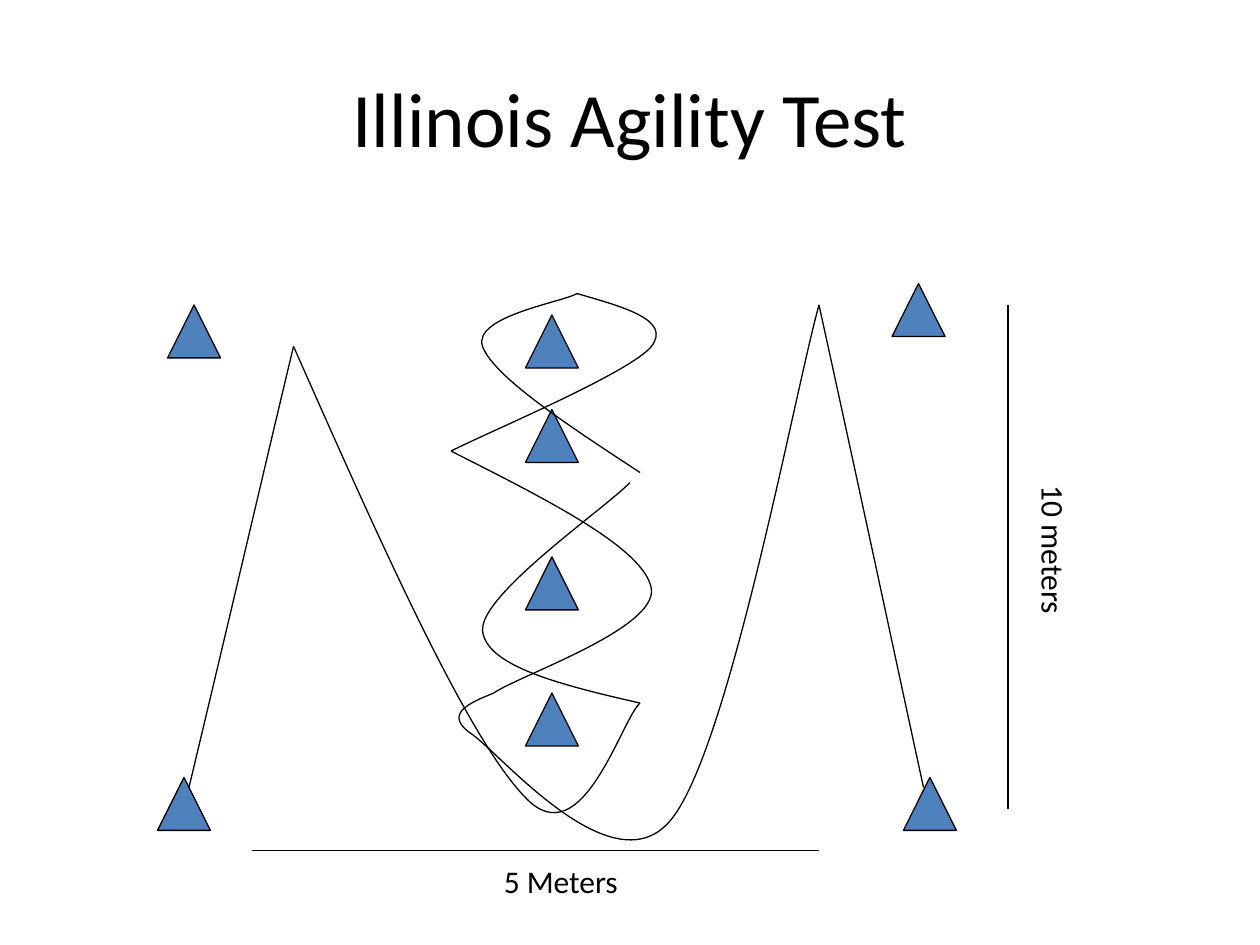
import pptx
import pptx.dml.color
import pptx.enum.shapes
import pptx.enum.text
import pptx.oxml
import pptx.oxml.ns
import pptx.util
from pptx.util import Inches

BLACK = "000000"
CONE_BLUE = "4F81BD"
CONE_SIZE = 0.42

# Top left corner of each cone
CONES = [
    (1.25, 6.17), (1.33, 2.42),
    (4.17, 2.5), (4.17, 3.25), (4.17, 4.42), (4.17, 5.5),
    (7.08, 2.25), (7.17, 6.17),
]

# Running route: a start point, then three points for each Bezier curve
ROUTE = [
    [(1.5, 6.25), (1.85, 4.79), (2.19, 3.33), (2.33, 2.75)],
    [(2.33, 2.75), (3.02, 4.31), (3.71, 5.86), (4.17, 6.33),
     (4.62, 6.81), (4.93, 5.71), (5.08, 5.58)],
    [(5.08, 5.58), (4.47, 5.44), (3.85, 5.29), (3.83, 5),
     (3.82, 4.71), (4.81, 4.03), (5, 3.83)],
    [(5.08, 3.75), (4.5, 3.37), (3.92, 2.99), (3.83, 2.75),
     (3.75, 2.51), (4.46, 2.4), (4.58, 2.33)],
    [(4.58, 2.33), (4.96, 2.44), (5.33, 2.54), (5.17, 2.75),
     (5, 2.96), (3.85, 3.44), (3.58, 3.58)],
    [(3.58, 3.58), (4.35, 3.97), (5.11, 4.35), (5.17, 4.67),
     (5.22, 4.99), (4.12, 5.36), (3.92, 5.5)],
    [(3.92, 5.5), (3.72, 5.58), (3.51, 5.67), (3.75, 5.83),
     (3.99, 6), (4.88, 7.07), (5.33, 6.5),
     (5.79, 5.93), (6.31, 3.1), (6.5, 2.42)],
    [(6.5, 2.42), (6.85, 4.01), (7.19, 5.61), (7.33, 6.25)],
]


def color(hex_code):
    return pptx.dml.color.RGBColor.from_string(hex_code)


def set_outline(line):
    line.color.rgb = color(BLACK)
    line.width = pptx.util.Pt(0.75)


def write(paragraph, wording, size):
    run = paragraph.add_run()
    run.text = wording
    run.font.name = "Calibri"
    run.font.size = pptx.util.Pt(size)
    run.font.color.rgb = color(BLACK)


def add_title(slide, wording):
    title = slide.shapes.title
    title.left, title.top = Inches(0.5), Inches(0.3)
    title.width, title.height = Inches(9), Inches(1.25)
    title.text_frame.vertical_anchor = pptx.enum.text.MSO_ANCHOR.MIDDLE
    heading = title.text_frame.paragraphs[0]
    heading.alignment = pptx.enum.text.PP_ALIGN.CENTER
    write(heading, wording, 44)


def add_cone(slide, left, top):
    cone = slide.shapes.add_shape(
        pptx.enum.shapes.MSO_SHAPE.ISOSCELES_TRIANGLE,
        Inches(left), Inches(top), Inches(CONE_SIZE), Inches(CONE_SIZE))
    cone.shadow.inherit = False
    cone.fill.solid()
    cone.fill.fore_color.rgb = color(CONE_BLUE)
    set_outline(cone.line)


def add_curve(slide, points):
    start, *rest = [(Inches(x), Inches(y)) for x, y in points]
    builder = slide.shapes.build_freeform(*start)
    builder.add_line_segments(rest, close=False)
    curve = builder.convert_to_shape()
    curve.shadow.inherit = False
    curve.fill.background()
    set_outline(curve.line)

    # Merge every three straight segments into one Bezier curve
    segments = curve._element.xpath(".//a:lnTo")
    for i in range(0, len(segments), 3):
        bezier = pptx.oxml.parse_xml(
            f"<a:cubicBezTo {pptx.oxml.ns.nsdecls('a')}/>")
        segments[i].addprevious(bezier)
        for segment in segments[i:i + 3]:
            bezier.append(segment[0])
            segment.getparent().remove(segment)


def add_measure(slide, start, end):
    measure = slide.shapes.add_connector(
        pptx.enum.shapes.MSO_CONNECTOR.STRAIGHT,
        Inches(start[0]), Inches(start[1]), Inches(end[0]), Inches(end[1]))
    set_outline(measure.line)
    measure._element.spPr.append(pptx.oxml.parse_xml(
        f"<a:effectLst {pptx.oxml.ns.nsdecls('a')}/>"))


def add_label(slide, wording, left, top, width, rotation=0):
    label = slide.shapes.add_textbox(
        Inches(left), Inches(top), Inches(width), Inches(0.4))
    label.rotation = rotation
    label.text_frame.word_wrap = False
    label.text_frame.auto_size = pptx.enum.text.MSO_AUTO_SIZE.SHAPE_TO_FIT_TEXT
    write(label.text_frame.paragraphs[0], wording, 18)


def main():
    deck = pptx.Presentation()
    deck.slide_width, deck.slide_height = Inches(10), Inches(7.5)
    slide = deck.slides.add_slide(deck.slide_layouts.get_by_name("Title Only"))

    add_title(slide, "Illinois Agility Test")

    # Course: cones and the route around them
    for left, top in CONES:
        add_cone(slide, left, top)
    for points in ROUTE:
        add_curve(slide, points)

    # Dimensions of the course
    add_label(slide, "5 Meters", 3.9, 6.79, 1.17)
    add_measure(slide, (8, 6.42), (8, 2.42))
    add_label(slide, "10 meters", 7.71, 4.21, 1.31, rotation=90)
    add_measure(slide, (2, 6.75), (6.5, 6.75))

    deck.save("out.pptx")


if __name__ == "__main__":
    main()
